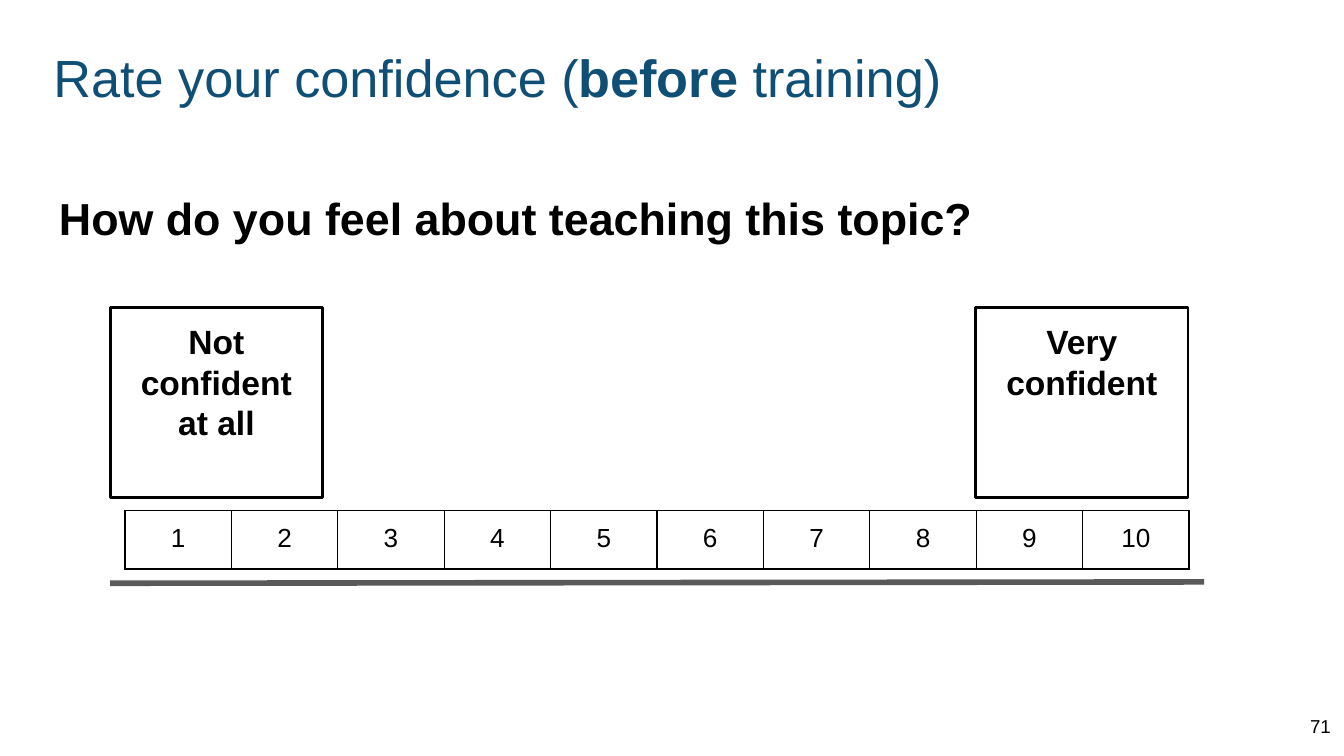
from dataclasses import dataclass

from lxml import etree
from pptx import Presentation
from pptx.dml.color import RGBColor
from pptx.enum.shapes import MSO_CONNECTOR, MSO_SHAPE
from pptx.enum.text import MSO_ANCHOR, PP_ALIGN
from pptx.oxml.ns import qn
from pptx.util import Inches, Pt

LEFT, CENTER, RIGHT = PP_ALIGN.LEFT, PP_ALIGN.CENTER, PP_ALIGN.RIGHT
TOP, MIDDLE = MSO_ANCHOR.TOP, MSO_ANCHOR.MIDDLE
RECTANGLE, STRAIGHT = MSO_SHAPE.RECTANGLE, MSO_CONNECTOR.STRAIGHT


@dataclass(frozen=True)
class Theme:
    font: str = "Arial"
    heading: str = "104F75"
    ink: str = "000000"
    rule: str = "595959"
    title_size: int = 28
    question_size: int = 24
    label_size: int = 18
    score_size: int = 14
    number_size: int = 10
    inset: float = 0.1


THEME = Theme()


def rgb(color):
    return RGBColor.from_string(color)


def set_margins(holder):
    """Give a text frame or a table cell the same margin on all sides."""
    holder.margin_left = holder.margin_right = Inches(THEME.inset)
    holder.margin_top = holder.margin_bottom = Inches(THEME.inset)


def write(paragraph, runs, size, color=THEME.ink, bold=False, align=LEFT):
    paragraph.alignment = align
    font = paragraph.font
    font.name, font.size, font.bold = THEME.font, Pt(size), bold
    font.color.rgb = rgb(color)
    for text, emphasis in runs:
        run = paragraph.add_run()
        run.text = text
        if emphasis:
            run.font.bold = True


def write_in_frame(frame, runs, size, anchor=TOP, **style):
    """Fill a text frame with one paragraph and return that paragraph."""
    frame.word_wrap = True
    frame.vertical_anchor = anchor
    set_margins(frame)
    paragraph = frame.paragraphs[0]
    write(paragraph, runs, size, **style)
    return paragraph


def add_text(slide, box, runs, size, **style):
    frame = slide.shapes.add_textbox(*map(Inches, box)).text_frame
    return write_in_frame(frame, runs, size, **style)


def add_question(slide, box, question):
    paragraph = add_text(slide, box, [(question, False)], THEME.question_size, bold=True)
    paragraph.line_spacing = 1.15
    paragraph.space_after = Pt(16)


def add_end_label(slide, box, label):
    frame = slide.shapes.add_shape(RECTANGLE, *map(Inches, box))
    frame.shadow.inherit = False
    frame.fill.background()
    frame.line.color.rgb = rgb(THEME.ink)
    frame.line.width = Pt(1.5)
    write_in_frame(frame.text_frame, [(label, False)], THEME.label_size,
                   bold=True, align=CENTER)


def outline_cell(cell, width=0.75):
    properties = cell._tc.get_or_add_tcPr()
    for position, side in enumerate(("a:lnL", "a:lnR", "a:lnT", "a:lnB")):
        edge = etree.Element(qn(side), w=str(Pt(width)))
        fill = etree.SubElement(edge, qn("a:solidFill"))
        etree.SubElement(fill, qn("a:srgbClr"), val=THEME.ink)
        properties.insert(position, edge)


def add_scores(slide, box, count):
    table = slide.shapes.add_table(1, count, *map(Inches, box)).table
    table.first_row = table.horz_banding = False
    for score, cell in enumerate(table.rows[0].cells, start=1):
        cell.fill.background()
        outline_cell(cell)
        set_margins(cell)
        cell.vertical_anchor = TOP
        write(cell.text_frame.paragraphs[0], [(str(score), False)], THEME.score_size,
              align=CENTER)


def add_rule(slide, start, end):
    rule = slide.shapes.add_connector(STRAIGHT, *map(Inches, start + end))
    rule.line.color.rgb = rgb(THEME.rule)
    rule.line.width = Pt(3)
    etree.SubElement(rule._element.spPr, qn("a:effectLst"))


def add_scale(slide, box, low, high):
    """Place the two end labels, the scores from 1 to 10 and the rule below."""
    left, top, width, height = box
    label_width, label_height = 1.58, 1.41
    scores_left, scores_width = left + 0.11, 7.92
    scores_right = scores_left + scores_width
    for label, label_left in ((low, left), (high, scores_right - label_width - 0.01)):
        add_end_label(slide, (label_left, top, label_width, label_height), label)
    add_scores(slide, (scores_left, top + 1.51, scores_width, 0.42), 10)
    bottom = top + height
    add_rule(slide, (left, bottom), (left + width, bottom - 0.01))


def add_confidence_slide(presentation):
    slide = presentation.slides.add_slide(presentation.slide_layouts[6])
    title = [("Rate your confidence (", False), ("before", True), (" training)", False)]
    add_text(slide, (0.3, 0.24, 9.36, 0.63), title, THEME.title_size, color=THEME.heading)
    add_question(slide, (0.34, 1.26, 9.32, 3.74), "How do you feel about teaching this topic?")
    add_scale(slide, (0.82, 2.29, 8.14, 2.05), "Not confident at all", "Very confident")
    add_text(slide, (9.4, 5.19, 0.6, 0.43), [("71", False)], THEME.number_size,
             align=RIGHT, anchor=MIDDLE)


def main():
    presentation = Presentation()
    presentation.slide_width = Inches(10)
    presentation.slide_height = presentation.slide_width * 9 // 16
    add_confidence_slide(presentation)
    presentation.save("out.pptx")


if __name__ == "__main__":
    main()
